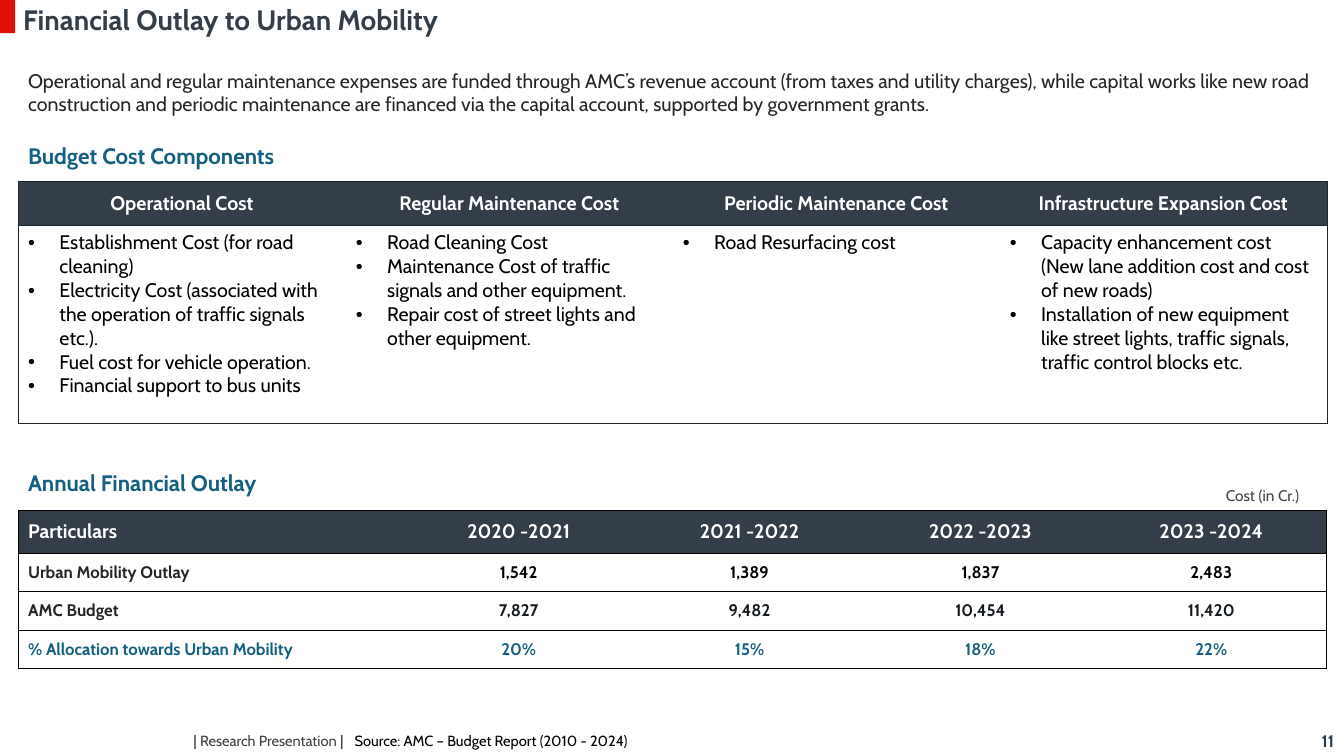
from lxml import etree
from pptx import Presentation
from pptx.dml.color import RGBColor
from pptx.enum.shapes import MSO_SHAPE
from pptx.enum.text import MSO_ANCHOR, MSO_AUTO_SIZE, PP_ALIGN
from pptx.oxml.ns import qn
from pptx.util import Emu, Pt

RECT = MSO_SHAPE.RECTANGLE
TOP, MIDDLE = MSO_ANCHOR.TOP, MSO_ANCHOR.MIDDLE
LEFT, CENTER, RIGHT = PP_ALIGN.LEFT, PP_ALIGN.CENTER, PP_ALIGN.RIGHT
NO_FIT = MSO_AUTO_SIZE.NONE

WHITE = RGBColor(0xFF, 0xFF, 0xFF)
BLACK = RGBColor(0, 0, 0)
SLATE = RGBColor(0x34, 0x3E, 0x48)
EDGE = RGBColor(0x1E, 0x25, 0x2B)
RED = RGBColor(0xDF, 0x10, 0x07)
NAVY = RGBColor(0x20, 0x3D, 0x52)
TEAL = RGBColor(0x15, 0x60, 0x82)
INK = RGBColor(0x26, 0x26, 0x26)
COAL = RGBColor(0x16, 0x1B, 0x20)
GREY = RGBColor(0x40, 0x40, 0x40)

PLAIN_GRID = "{2D5ABB26-0587-4C30-8999-92F81FD0307C}"
SCALE = 9144  # 100 px to the inch


def px(num):
    return Emu(round(num * SCALE))


class Page:
    font = "Cabin"

    def __init__(self, deck):
        self.slide = deck.slides.add_slide(deck.slide_layouts[5])
        self.shapes = self.slide.shapes

    def style(self, par, size, color, bold=False, align=LEFT):
        par.alignment = align
        for run in par.runs:
            font = run.font
            font.name, font.size, font.bold = self.font, Pt(size), bold
            font.color.rgb = color

    def title(self, text, left, top, width, height):
        box = self.shapes.title
        box.left, box.top, box.width, box.height = map(px, (left, top, width, height))
        frame = box.text_frame
        frame.text = text
        frame.auto_size = NO_FIT
        frame.vertical_anchor = MIDDLE
        frame.margin_top = frame.margin_bottom = 0
        self.style(frame.paragraphs[0], 20, SLATE, True)

    def bar(self, left, top, width, height, color):
        shape = self.shapes.add_shape(RECT, *map(px, (left, top, width, height)))
        shape.shadow.inherit = False
        shape.fill.solid()
        shape.fill.fore_color.rgb = color
        shape.line.fill.background()

    def text(self, text, left, top, width, height, size, color,
             bold=False, align=LEFT, anchor=TOP):
        box = self.shapes.add_textbox(*map(px, (left, top, width, height)))
        frame = box.text_frame
        frame.word_wrap = True
        frame.vertical_anchor = anchor
        frame.text = text
        self.style(frame.paragraphs[0], size, color, bold, align)
        return frame.paragraphs[0]

    def table(self, left, top, width, first, heights, cols):
        """Add an unstyled table; the columns after the first share the rest."""
        frame = self.shapes.add_table(
            len(heights), cols, *map(px, (left, top, width, sum(heights))))
        table = frame.table
        table.first_row = table.horz_banding = False
        table._tbl.tblPr[0].text = PLAIN_GRID
        for num, col in enumerate(table.columns):
            col.width = px((width - first) / (cols - 1) if num else first)
        for row, height in zip(table.rows, heights):
            row.height = px(height)
        return table

    def frame(self, table, color):
        """Rule every row and close the left and right sides."""
        last = len(table.columns) - 1
        for row in table.rows:
            for num, cell in enumerate(row.cells):
                sides = ["L"] * (num == 0) + ["R"] * (num == last) + ["T", "B"]
                props = cell._tc.get_or_add_tcPr()
                for side in sides:
                    line = etree.SubElement(props, qn("a:ln" + side), w=str(Pt(0.5)))
                    fill = etree.SubElement(line, qn("a:solidFill"))
                    etree.SubElement(fill, qn("a:srgbClr"), val=str(color))

    def cell(self, cell, lines, size, color, bold=False, align=LEFT,
             anchor=MIDDLE, fill=None, bullet=False):
        if fill is None:
            cell.fill.background()
        else:
            cell.fill.solid()
            cell.fill.fore_color.rgb = fill
        cell.vertical_anchor = anchor
        cell.text_frame.text = "\n".join(lines)
        for par in cell.text_frame.paragraphs:
            if bullet:
                self.bullet(par)
            self.style(par, size, color, bold, align)

    def bullet(self, par):
        props = par._p.get_or_add_pPr()
        props.set("marL", str(px(31)))
        props.set("indent", str(-px(31)))
        etree.SubElement(props, qn("a:buFont"), typeface="Arial")
        etree.SubElement(props, qn("a:buChar"), char="•")


COSTS = {
    "Operational Cost": [
        "Establishment Cost (for road cleaning)",
        "Electricity Cost (associated with the operation of traffic signals etc.).",
        "Fuel cost for vehicle operation.",
        "Financial support to bus units"],
    "Regular Maintenance Cost": [
        "Road Cleaning Cost",
        "Maintenance Cost of traffic signals and other equipment.",
        "Repair cost of street lights and other equipment."],
    "Periodic Maintenance Cost": ["Road Resurfacing cost"],
    "Infrastructure Expansion Cost": [
        "Capacity enhancement cost (New lane addition cost and cost of new roads)",
        "Installation of new equipment like street lights, traffic signals, "
        "traffic control blocks etc."],
}
YEARS = ["Particulars", "2020 -2021", "2021 -2022", "2022 -2023", "2023 -2024"]
OUTLAY = [
    (["Urban Mobility Outlay", "1,542", "1,389", "1,837", "2,483"], INK, BLACK),
    (["AMC Budget", "7,827", "9,482", "10,454", "11,420"], INK, COAL),
    (["% Allocation towards Urban Mobility", "20%", "15%", "18%", "22%"], TEAL, TEAL),
]
INTRO = (
    "Operational and regular maintenance expenses are funded through AMC’s revenue "
    "account (from taxes and utility charges), while capital works like new road "
    "construction and periodic maintenance are financed via the capital account, "
    "supported by government grants.")
EDGE_X, WIDE = 18, 1298


def main():
    deck = Presentation()
    deck.slide_width, deck.slide_height = px(1333), px(750)
    page = Page(deck)

    page.title("Financial Outlay to Urban Mobility", 13, 0, 1228, 38)
    page.bar(0, 0, 15, 33, RED)
    page.text(INTRO, EDGE_X, 63, WIDE, 57, 14, INK)

    page.text("Budget Cost Components", EDGE_X, 136, 498, 37, 16, TEAL, True)
    costs = page.table(EDGE_X, 180, WIDE, 325, [44, 196], len(COSTS))
    page.frame(costs, EDGE)
    for col, (head, items) in enumerate(COSTS.items()):
        page.cell(costs.cell(0, col), [head], 14, WHITE, True, CENTER, fill=SLATE)
        page.cell(costs.cell(1, col), items, 14, BLACK, anchor=TOP, bullet=True)

    page.text("Annual Financial Outlay", EDGE_X, 461, 498, 37, 16, TEAL, True)
    page.text("Cost (in Cr.)", 1206, 477, 110, 29, 11, GREY)
    outlay = page.table(EDGE_X, 506, WIDE, 382, [43, 38, 38, 38], len(YEARS))
    page.frame(outlay, BLACK)
    for col, year in enumerate(YEARS):
        align = CENTER if col else LEFT
        page.cell(outlay.cell(0, col), [year], 14, WHITE, True, align, fill=SLATE)
        for row, (texts, label, value) in enumerate(OUTLAY, 1):
            color = value if col else label
            page.cell(outlay.cell(row, col), [texts[col]], 12, color, True, align)

    foot = page.text("|", 182, 720, 534, 29, 11, GREY, True, anchor=MIDDLE)
    for text in (" Research Presentation ", "|"):
        foot.add_run().text = text
    page.style(foot, 10.5, GREY)
    for mark in foot.runs[::2]:
        mark.font.bold = True
    page.text("Source: AMC – Budget Report (2010 - 2024)", 342, 721, 660, 28, 10.5, BLACK)
    page.text("11", 1033, 720, 300, 29, 12, NAVY, True, RIGHT)
    deck.save("out.pptx")


if __name__ == "__main__":
    main()
